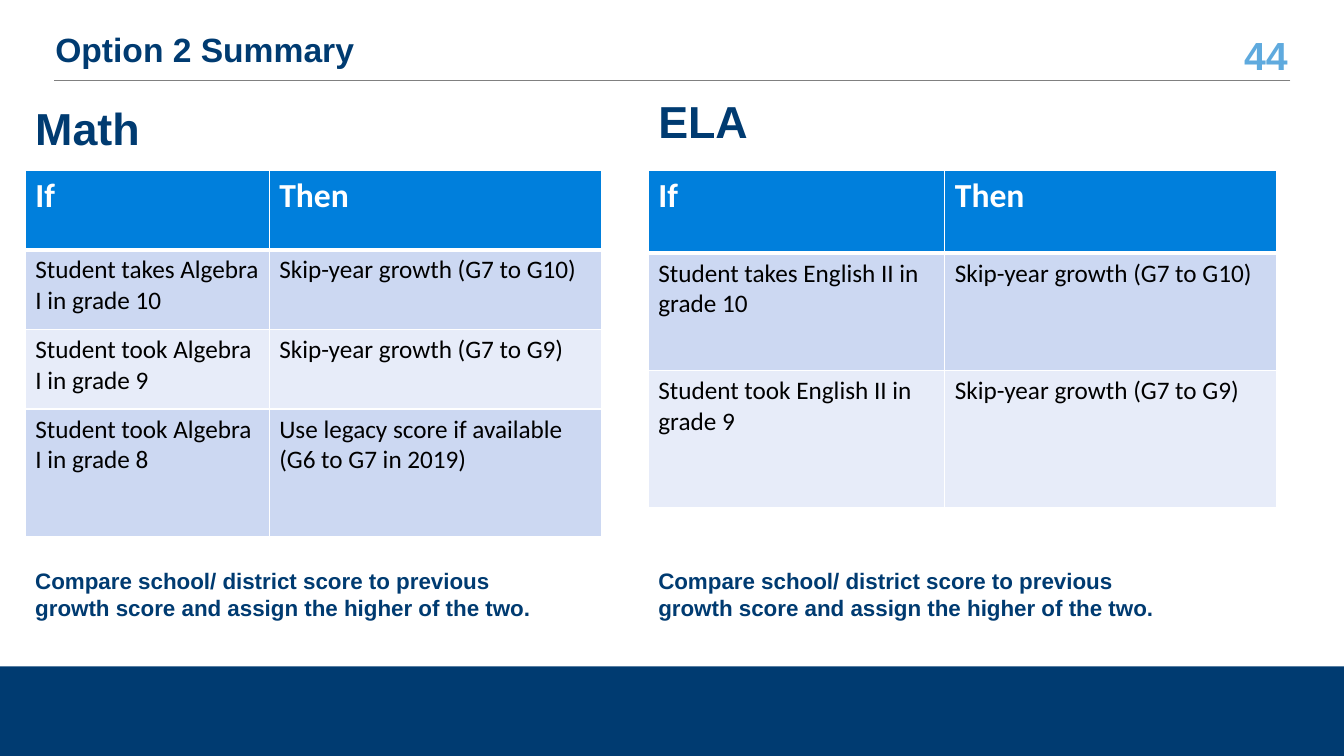
from pptx import Presentation
from pptx.dml.color import RGBColor
from pptx.enum.shapes import MSO_CONNECTOR, MSO_SHAPE
from pptx.enum.text import MSO_ANCHOR, PP_ALIGN
from pptx.oxml.ns import qn
from pptx.util import Inches, Pt
from lxml.etree import SubElement

NAVY, SKY, BLUE, GREY = "003B71", "5FAADE", "007FDC", "808080"
WHITE, BLACK = "FFFFFF", "000000"
BANDS = ["CCD8F2", "E7ECF9"]
NOTE = ("Compare school/ district score to previous growth score "
        "and assign the higher of the two.")


def color(code):
    return RGBColor.from_string(code)


class Deck:
    """Style and current slide; lengths are percent of width and height."""

    def __init__(self):
        self.file = Presentation()
        self.file.slide_width = Inches(13.33)
        self.file.slide_height = Inches(7.5)
        self.slide = self.file.slides.add_slide(self.file.slide_layouts[6])
        self.shapes = self.slide.shapes
        self.head, self.body = "Arial", "Calibri"

    def across(self, share):
        return round(self.file.slide_width * share / 100)

    def down(self, share):
        return round(self.file.slide_height * share / 100)

    def place(self, x, y, w, h):
        return self.across(x), self.down(y), self.across(w), self.down(h)

    def run(self, para, text, size, code, bold, face):
        run = para.add_run()
        run.text = text
        font = run.font
        font.size, font.bold, font.name = Pt(size), bold, face
        font.color.rgb = color(code)

    def text(self, text, x, y, w, h, size, code=NAVY,
             align=PP_ALIGN.LEFT, space=1.0):
        frame = self.shapes.add_textbox(*self.place(x, y, w, h)).text_frame
        frame.word_wrap = True
        frame.vertical_anchor = MSO_ANCHOR.MIDDLE
        para = frame.paragraphs[0]
        para.alignment, para.line_spacing = align, space
        self.run(para, text, size, code, True, self.head)

    def block(self, x, y, w, h, code):
        shape = self.shapes.add_shape(MSO_SHAPE.RECTANGLE,
                                      *self.place(x, y, w, h))
        shape.shadow.inherit = False
        shape.fill.solid()
        shape.fill.fore_color.rgb = color(code)
        shape.line.fill.background()

    def rule(self, start, end, y, code, width):
        line = self.shapes.add_connector(
            MSO_CONNECTOR.STRAIGHT, self.across(start), self.down(y),
            self.across(end), self.down(y))
        line.line.color.rgb = color(code)
        line.line.width = Pt(width)
        SubElement(line._element.spPr, qn("a:effectLst"))

    def edge(self, cell, sides):
        props = cell._tc.get_or_add_tcPr()
        for side, width in sides.items():
            line = SubElement(props, qn(f"a:ln{side}"), w=str(Pt(width)))
            fill = SubElement(line, qn("a:solidFill"))
            SubElement(fill, qn("a:srgbClr"), val=WHITE)

    def table(self, x, y, cols, rows, data):
        grid = self.shapes.add_table(
            len(rows), len(cols),
            *self.place(x, y, sum(cols), sum(rows))).table
        for col, share in zip(grid.columns, cols):
            col.width = self.across(share)
        for row, share in zip(grid.rows, rows):
            row.height = self.down(share)
        for r, line in enumerate(data):
            top = r == 0
            for c, text in enumerate(line):
                cell = grid.cell(r, c)
                # Borders come before the fill in the cell's XML
                self.edge(cell, {"L": 1, "R": 1, "T": 3 if r == 1 else 1,
                                 "B": 3 if top else 1})
                cell.fill.solid()
                cell.fill.fore_color.rgb = color(
                    BLUE if top else BANDS[(r - 1) % 2])
                self.run(cell.text_frame.paragraphs[0], text,
                         24 if top else 18, WHITE if top else BLACK,
                         top, self.body)


def main():
    deck = Deck()

    # Page frame: footer band, page number, title and rule
    deck.block(0, 88.13, 100, 11.87, NAVY)
    deck.text("44", 90.55, 4.4, 6, 5.6, 28, SKY, PP_ALIGN.RIGHT)
    deck.rule(96.02, 4.05, 10.67, GREY, 0.5)
    deck.text("Option 2 Summary", 3.38, 4, 87.02, 5.6, 24, space=0.9)

    # One panel per subject: name, left, name top, columns, rows, data
    panels = [
        ("Math", 1.88, 13.87, [18.15, 24.76], [10.53] * 3 + [16.93], [
            ("If", "Then"),
            ("Student takes Algebra I in grade 10",
             "Skip-year growth (G7 to G10)"),
            ("Student took Algebra I in grade 9",
             "Skip-year growth (G7 to G9)"),
            ("Student took Algebra I in grade 8",
             "Use legacy score if available (G6 to G7 in 2019)")]),
        ("ELA", 48.24, 12.93, [22.06, 24.68], [10.93, 15.6, 18.13], [
            ("If", "Then"),
            ("Student takes English II in grade 10",
             "Skip-year growth (G7 to G10)"),
            ("Student took English II in grade 9",
             "Skip-year growth (G7 to G9)")]),
    ]
    for name, x, top, cols, rows, data in panels:
        deck.table(x, 22.53, cols, rows, data)
        deck.text(name, x, top, 23.11, 6.13, 32)
        deck.text(NOTE, x, 73.6, 41.04, 10, 16)

    deck.file.save("out.pptx")


if __name__ == "__main__":
    main()
